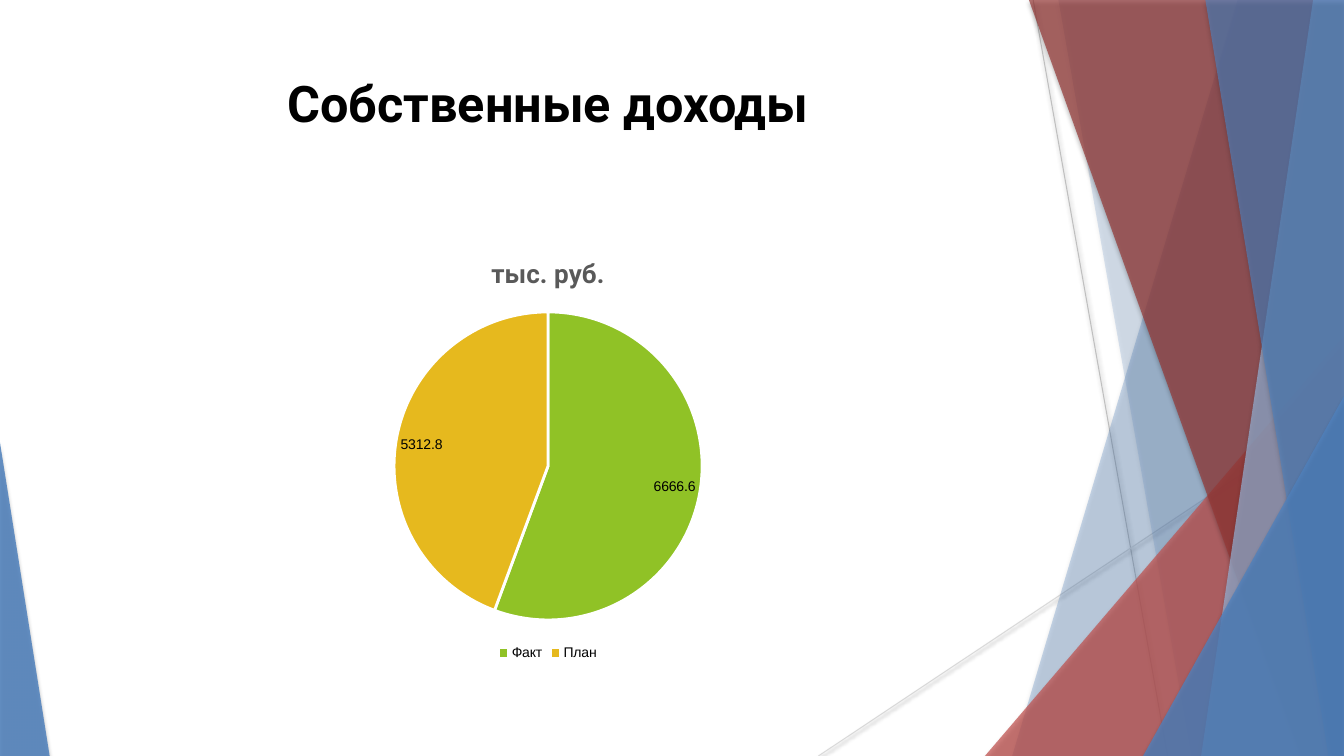
from dataclasses import dataclass

from lxml import etree
from pptx import Presentation
from pptx import util as u
from pptx.chart.data import CategoryChartData
from pptx.dml.color import RGBColor
from pptx.enum import chart as ch
from pptx.enum import shapes, text
from pptx.oxml import parse_xml
from pptx.oxml.ns import nsdecls, qn

Pt = u.Pt
WIDE, HIGH = 960, 540
HUES = {
    "blue": "4F81BD", "pale": "95B3D7", "red": "C0504D", "wine": "953735",
    "gray": "BFBFBF", "mist": "D9D9D9", "black": "000000", "white": "FFFFFF",
    "slate": "595959", "green": "90C226", "gold": "E6B91E",
}


@dataclass
class Ray:
    start: tuple[float, float]
    end: tuple[float, float]
    hue: str


@dataclass
class Band:
    """Panel with a slanted left edge, reaching the right side of the slide."""
    top: float
    base: float
    hue: str
    alpha: int


@dataclass
class Wedge:
    """Right triangle standing on the bottom of the slide."""
    left: float
    top: float
    width: float
    peak: float
    hue: str
    alpha: int


RAYS = [Ray((738, 0), (834, HIGH), "gray"), Ray((WIDE, 290), (584.6, HIGH), "mist")]
PARTS = [
    Band(884, 723, "blue", 30),
    Band(756, 851, "blue", 20),
    Wedge(703.5, 240, 256.5, 1, "red", 72),
    Band(735, 929.5, "wine", 70),
    Band(938, 858, "pale", 70),
    Band(861, 949, "blue", 65),
    Wedge(816.5, 283, 143.5, 1, "blue", 80),
    Wedge(0, 316, 35.5, 0, "blue", 85),
]


def rgb(hue: str) -> RGBColor:
    return RGBColor.from_string(HUES[hue])


def shade(shape, blur: float, dist: float, alpha: int) -> None:
    """Give the shape a soft shadow that falls straight down."""
    shape._element.spPr.append(parse_xml(
        f'<a:effectLst {nsdecls("a")}><a:outerShdw blurRad="{Pt(blur)}" '
        f'dist="{Pt(dist)}" dir="5400000" rotWithShape="0"><a:srgbClr '
        f'val="{HUES["black"]}"><a:alpha val="{alpha * 1000}"/></a:srgbClr>'
        '</a:outerShdw></a:effectLst>'))


def draw_ray(slide, ray: Ray) -> None:
    line = slide.shapes.add_connector(
        shapes.MSO_CONNECTOR.STRAIGHT, *map(Pt, ray.start + ray.end))
    line.line.color.rgb = rgb(ray.hue)
    line.line.width = Pt(0.75)
    shade(line, 3.1, 1.6, 38)


def draw_part(slide, part: Band | Wedge) -> None:
    if isinstance(part, Band):
        pen = slide.shapes.build_freeform(Pt(part.top), 0)
        ends = [(WIDE, 0), (WIDE, HIGH), (part.base, HIGH)]
        pen.add_line_segments([(Pt(x), Pt(y)) for x, y in ends], close=True)
        shape = pen.convert_to_shape()
    else:
        shape = slide.shapes.add_shape(
            shapes.MSO_SHAPE.ISOSCELES_TRIANGLE, Pt(part.left), Pt(part.top),
            Pt(part.width), Pt(HIGH - part.top))
        shape.adjustments[0] = part.peak
    shape.fill.solid()
    shape.fill.fore_color.rgb = rgb(part.hue)
    tint = shape._element.spPr.find(qn("a:solidFill"))[0]
    etree.SubElement(tint, qn("a:alpha")).set("val", str(part.alpha * 1000))
    shape.line.fill.background()
    shade(shape, 3, 2, 35)


def style(font, face: str, size: float, hue: str, bold: bool = False) -> None:
    font.name, font.size, font.bold = face, Pt(size), bold
    font.color.rgb = rgb(hue)


def draw_title(slide) -> None:
    title = slide.shapes.title
    title.left, title.top, title.width, title.height = map(Pt, (53, 48, 677, 104))
    frame = title.text_frame
    frame.text = "Собственные доходы"
    frame.vertical_anchor = text.MSO_ANCHOR.TOP
    frame.paragraphs[0].alignment = text.PP_ALIGN.CENTER
    style(frame.paragraphs[0].runs[0].font, "Roboto", 36, "black", True)


def draw_pie(slide) -> None:
    data = CategoryChartData()
    data.categories = ["Факт", "План"]
    data.add_series("тыс. руб.", [6666.6, 5312.8])
    pie = slide.shapes.add_chart(
        ch.XL_CHART_TYPE.PIE, *map(Pt, (53, 170, 677, 305)), data).chart
    style(pie.font, "Arial", 10, "black")

    # Heading and legend
    pie.has_title = True
    head = pie.chart_title.text_frame
    head.text = "тыс. руб."
    style(head.paragraphs[0].runs[0].font, "Roboto", 18.6, "slate", True)
    pie.has_legend = True
    pie.legend.position = ch.XL_LEGEND_POSITION.BOTTOM
    pie.legend.include_in_layout = False

    # Slices and values
    plot = pie.plots[0]
    plot.vary_by_categories = True
    for spot, hue in enumerate(("green", "gold")):
        slice_ = plot.series[0].points[spot].format
        slice_.fill.solid()
        slice_.fill.fore_color.rgb = rgb(hue)
        slice_.line.color.rgb = rgb("white")
        slice_.line.width = Pt(2)
    labels = plot.series[0].data_labels
    labels.show_value = True
    labels.position = ch.XL_LABEL_POSITION.BEST_FIT
    style(labels.font, "Arial", 10, "black")


def main() -> None:
    deck = Presentation()
    deck.slide_width, deck.slide_height = Pt(WIDE), Pt(HIGH)
    slide = deck.slides.add_slide(deck.slide_layouts[5])
    # Background decoration
    for ray in RAYS:
        draw_ray(slide, ray)
    for part in PARTS:
        draw_part(slide, part)
    # Content
    draw_title(slide)
    draw_pie(slide)
    deck.save("out.pptx")


if __name__ == "__main__":
    main()
